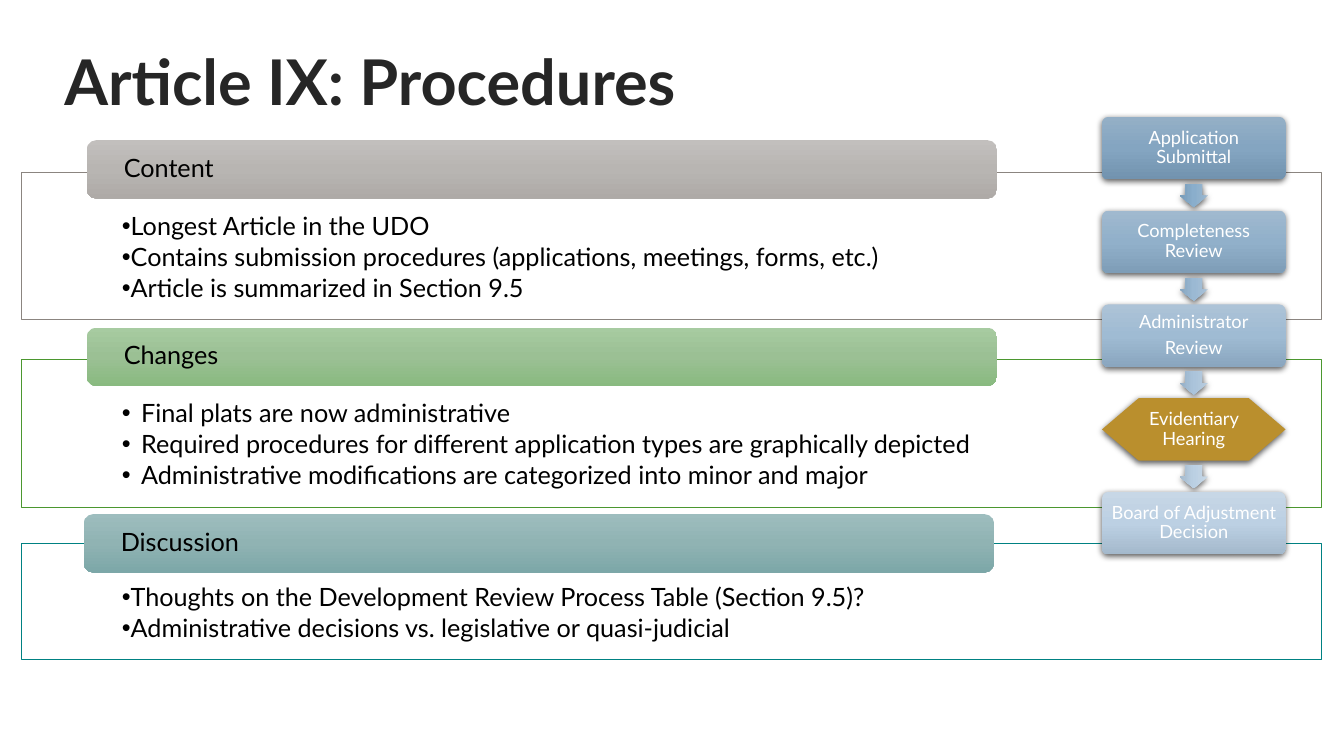
import copy
from dataclasses import dataclass

import lxml.etree
import pptx
import pptx.dml.color
import pptx.enum.shapes
import pptx.enum.text
import pptx.oxml.ns
import pptx.util

Inches = pptx.util.Inches
Pt = pptx.util.Pt
Shape = pptx.enum.shapes.MSO_SHAPE
Align = pptx.enum.text.PP_ALIGN
Anchor = pptx.enum.text.MSO_ANCHOR
qn = pptx.oxml.ns.qn


@dataclass(frozen=True)
class Theme:
    font: str = "Lato"
    title: float = 45
    body: float = 18
    step: float = 13
    ink: str = "262626"
    black: str = "000000"
    white: str = "FFFFFF"
    gold: str = "BA8F2D"


THEME = Theme()

# name, panel box, bar left, bar top, bullet indent, line colour, bar colours, points
PANELS = [
    ("Content", (0.21, 1.71, 12.9, 1.46), 0.86, 1.39, 0, "8B8580",
     ("C2BFBD", "B8B5B2", "AEAAA7"),
     ["Longest Article in the UDO",
      "Contains submission procedures (applications, meetings, forms, etc.)",
      "Article is summarized in Section 9.5"]),
    ("Changes", (0.21, 3.57, 12.9, 1.46), 0.86, 3.25, 0.19, "4B972F",
     ("A7CBA1", "9BC094", "89BA80"),
     ["Final plats are now administrative",
      "Required procedures for different application types are graphically depicted",
      "Administrative modifications are categorized into minor and major"]),
    ("Discussion", (0.21, 5.39, 12.9, 1.15), 0.83, 5.1, 0, "008182",
     ("9DBDBE", "90B3B3", "7CA7A8"),
     ["Thoughts on the Development Review Process Table (Section 9.5)?",
      "Administrative decisions vs. legislative or quasi-judicial"]),
]

# lines of text, step colours (None for the hearing), colours of the arrow below
STEPS = [
    (["Application Submittal"], ("94AFC6", "84A5C1", "7293AF"),
     ("9BB7CF", "8AAECC", "779BB8")),
    (["Completeness Review"], ("A0B9CF", "91B0CA", "7E9DB7"),
     ("A9C1D7", "9BB9D3", "86A5BF")),
    (["Administrator", "Review"], ("ADC3D7", "9FBBD3", "8AA6BF"),
     ("B8CCDE", "ABC4DB", "95AFC6")),
    (["Evidentiary Hearing"], None, ("C7D7E6", "BBD0E3", "A4B9CC")),
    (["Board of Adjustment Decision"], ("C7D7E6", "BCD0E3", "A4B9CC"), None),
]


def rgb(code):
    return pptx.dml.color.RGBColor.from_string(code)


def blend(shape, codes):
    """Fill a shape with three colours running from top to bottom."""
    shape.fill.gradient()
    shape.fill.gradient_angle = 270
    stops = shape._element.spPr.find(".//" + qn("a:gsLst"))
    stops.insert(1, copy.deepcopy(stops[0]))
    for index, (stop, code) in enumerate(zip(shape.fill.gradient_stops, codes)):
        stop.position = index / 2
        stop.color.rgb = rgb(code)


def shade(shape):
    """Drop a soft shadow just below a shape."""
    effects = shape._element.spPr.find(qn("a:effectLst"))
    outer = lxml.etree.SubElement(
        effects, qn("a:outerShdw"), blurRad=str(Pt(4.5)), dist=str(Pt(1.5)),
        dir="5400000", algn="ctr", rotWithShape="0")
    color = lxml.etree.SubElement(outer, qn("a:srgbClr"), val=THEME.black)
    lxml.etree.SubElement(color, qn("a:alpha"), val="63000")


def block(slide, kind, box, paint, line=None):
    """Add a shape; paint is one colour or three blended ones."""
    shape = slide.shapes.add_shape(kind, *map(Inches, box))
    shape.shadow.inherit = False
    if isinstance(paint, str):
        shape.fill.solid()
        shape.fill.fore_color.rgb = rgb(paint)
    else:
        blend(shape, paint)
    if line:
        shape.line.color.rgb = rgb(line)
        shape.line.width = Pt(0.5)
    else:
        shape.line.fill.background()
    return shape


def write(shape, lines, size, color, inset, after=0, align=Align.LEFT,
          anchor=Anchor.MIDDLE, bold=False, indent=None):
    """Set the text; an indent, even zero, turns bullets on."""
    frame = shape.text_frame
    frame.word_wrap = True
    frame.vertical_anchor = anchor
    (frame.margin_left, frame.margin_top,
     frame.margin_right, frame.margin_bottom) = map(Inches, inset)
    for index, line in enumerate(lines):
        para = frame.add_paragraph() if index else frame.paragraphs[0]
        if indent is not None:
            props = para._p.get_or_add_pPr()
            props.set("marL", str(Inches(indent)))
            props.set("indent", str(-Inches(indent)))
            lxml.etree.SubElement(props, qn("a:buFont"), typeface="Arial")
            lxml.etree.SubElement(props, qn("a:buChar"), char="•")
        para.alignment = align
        para.line_spacing = 0.9
        para.space_after = Pt(after * size)
        run = para.add_run()
        run.text = line
        run.font.name = THEME.font
        run.font.size = Pt(size)
        run.font.bold = bold
        run.font.color.rgb = rgb(color)


def head(slide, box, text):
    shape = slide.shapes.add_textbox(*map(Inches, box))
    write(shape, [text], THEME.title, THEME.ink, (0.1, 0.05, 0.1, 0.05), bold=True)


def panel(slide, box, name, left, top, indent, line, paint, points):
    """Draw a framed list with its heading bar over the top edge."""
    frame = block(slide, Shape.RECTANGLE, box, THEME.white, line)
    write(frame, points, THEME.body, THEME.black, (1, 0.41, 1, 0.14),
          after=0.15, anchor=Anchor.TOP, indent=indent)
    bar = block(slide, Shape.ROUNDED_RECTANGLE, (left, top, 9.03, 0.58), paint)
    write(bar, [name], THEME.body, THEME.black, (0.34, 0, 0.34, 0), after=0.35)


def flow(slide, box, steps):
    """Stack the steps evenly in the box, with an arrow in each gap."""
    left, top, width, height = box
    tall, long, wide = 0.62, 0.23, 0.28
    pitch = (height - tall) / (len(steps) - 1)
    for index, (lines, paint, arrow) in enumerate(steps):
        y = top + index * pitch
        kind = Shape.ROUNDED_RECTANGLE if paint else Shape.FLOWCHART_PREPARATION
        step = block(slide, kind, (left, y, width, tall), paint or THEME.gold)
        if paint:
            step.adjustments[0] = 0.1
        shade(step)
        write(step, lines, THEME.step, THEME.white, (0.05,) * 4,
              after=0.35, align=Align.CENTER)
        if arrow:
            spot = (left + (width - long) / 2, y + tall + 0.02, long, wide)
            point = block(slide, Shape.RIGHT_ARROW, spot, arrow)
            point.rotation = 90
            point.adjustments[0] = 0.6
            shade(point)


def main():
    deck = pptx.Presentation()
    deck.slide_width = Inches(13.33)
    deck.slide_height = Inches(7.5)
    slide = deck.slides.add_slide(deck.slide_layouts[6])
    head(slide, (0.54, 0.31, 11.5, 1.06), "Article IX: Procedures")
    for name, box, *rest in PANELS:
        panel(slide, box, name, *rest)
    flow(slide, (10.93, 1.16, 1.82, 4.34), STEPS)
    deck.save("out.pptx")


if __name__ == "__main__":
    main()
